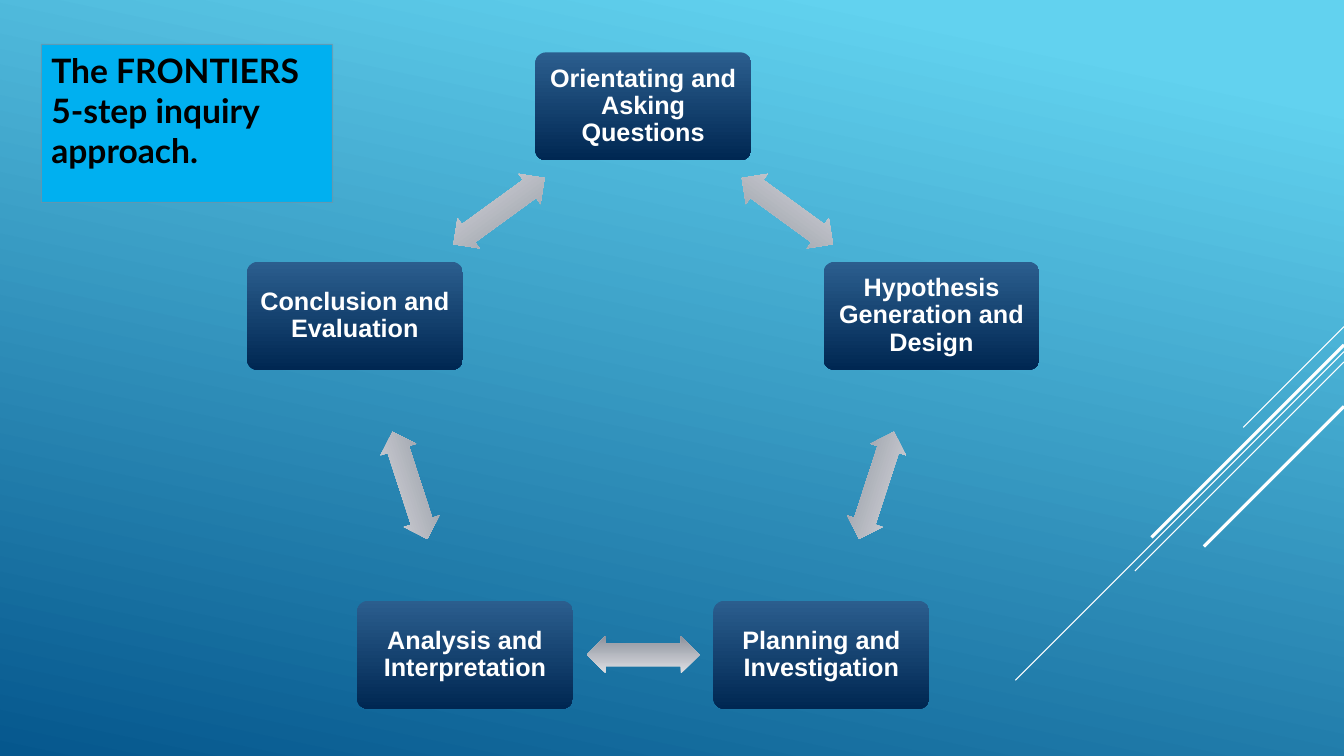
"""Builds the slide of the five-step inquiry cycle."""
import math

from lxml import etree
from pptx import Presentation
from pptx import util as u
from pptx.dml.color import RGBColor
from pptx.enum import shapes, text
from pptx.oxml.ns import qn

WHITE = RGBColor(0xFF, 0xFF, 0xFF)
BLACK = RGBColor(0, 0, 0)
SKY = RGBColor(0x62, 0xD2, 0xEF)
OCEAN = RGBColor(0x05, 0x57, 0x8D)
STEEL = RGBColor(0x2B, 0x5E, 0x8E)
NAVY = RGBColor(0x00, 0x27, 0x52)
SILVER = RGBColor(0xDE, 0xE0, 0xE4)
GREY = RGBColor(0x8D, 0x91, 0x9C)
CYAN = RGBColor(0x00, 0xB0, 0xF0)
EDGE = RGBColor(0x85, 0x8E, 0x99)

WIDTH, HEIGHT = 33.87, 19.05
STEPS = [
    "Orientating and Asking Questions",
    "Hypothesis Generation and Design",
    "Planning and Investigation",
    "Analysis and Interpretation",
    "Conclusion and Evaluation",
]
RAYS = [(8.23, 2.54, 0.75), (8.86, 8.28, 0.75), (9.12, 5.27, 0.75),
        (8.69, 4.85, 2.25), (10.24, 3.53, 2.25)]


class Deck:
    """Holds the style and the current slide."""

    def __init__(self, pres):
        self.font, self.size = "Arial", u.Pt(18)
        self.slide = pres.slides.add_slide(pres.slide_layouts[5])

    def blend(self, fill, first, last, angle=270, start=0):
        fill.gradient()
        fill.gradient_angle = angle
        stops = fill.gradient_stops
        stops[0].color.rgb, stops[1].color.rgb = first, last
        stops[0].position, stops[1].position = start, 1

    def ray(self, top, run, weight):
        line = self.slide.shapes.add_connector(
            shapes.MSO_CONNECTOR.STRAIGHT, u.Cm(WIDTH), u.Cm(top),
            u.Cm(WIDTH - run), u.Cm(top + run))
        line.line.color.rgb = WHITE
        line.line.width = u.Pt(weight)
        etree.SubElement(line._element.spPr, qn("a:effectLst"))

    def shape(self, kind, mid, wide, high, first, last):
        x, y = mid
        item = self.slide.shapes.add_shape(
            kind, u.Cm(x - wide / 2), u.Cm(y - high / 2), u.Cm(wide), u.Cm(high))
        item.shadow.inherit = False
        item.line.fill.background()
        self.blend(item.fill, first, last)
        return item

    def step(self, label, mid):
        box = self.shape(shapes.MSO_SHAPE.ROUNDED_RECTANGLE, mid, 5.44, 2.72, STEEL, NAVY)
        box.adjustments[0] = 0.1
        frame = box.text_frame
        frame.word_wrap = True
        frame.vertical_anchor = text.MSO_ANCHOR.MIDDLE
        frame.margin_left = frame.margin_right = u.Cm(0.18)
        frame.margin_top = frame.margin_bottom = u.Cm(0.18)
        para = frame.paragraphs[0]
        para.text = label
        para.alignment = text.PP_ALIGN.CENTER
        para.line_spacing = 0.9
        font = para.font
        font.name, font.size, font.bold = self.font, self.size, True
        font.color.rgb = WHITE

    def arrow(self, mid, turn):
        item = self.shape(shapes.MSO_SHAPE.LEFT_RIGHT_ARROW, mid, 2.84, 0.94, SILVER, GREY)
        item.adjustments[0], item.adjustments[1] = 0.6, 0.5
        item.rotation = turn

    def title(self, lines):
        box = self.slide.shapes.title
        box.left, box.top = u.Cm(1.04), u.Cm(1.12)
        box.width, box.height = u.Cm(7.34), u.Cm(3.33)
        box.fill.solid()
        box.fill.fore_color.rgb = CYAN
        box.line.color.rgb = EDGE
        box.line.width = u.Pt(0.75)
        tint = box.line._ln.find(".//" + qn("a:srgbClr"))
        etree.SubElement(tint, qn("a:alpha"), val="60000")
        frame = box.text_frame
        frame.text = "\n".join(lines)
        frame.word_wrap = True
        frame.auto_size = text.MSO_AUTO_SIZE.SHAPE_TO_FIT_TEXT
        frame.vertical_anchor = text.MSO_ANCHOR.TOP
        for para in frame.paragraphs:
            para.alignment = text.PP_ALIGN.LEFT
            font = para.font
            font.name, font.size, font.bold = "Lato", u.Pt(24), True
            font.color.rgb = BLACK


def main():
    pres = Presentation()
    pres.slide_width, pres.slide_height = u.Cm(WIDTH), u.Cm(HEIGHT)
    deck = Deck(pres)
    deck.blend(deck.slide.background.fill, SKY, OCEAN, 258, 0.1)
    for ray in RAYS:
        deck.ray(*ray)

    count, hub_x, hub_y, reach = len(STEPS), 16.21, 10.32, 7.64
    sweep = 360 / count

    def spot(angle, far):
        rad = math.radians(angle)
        return hub_x + far * math.sin(rad), hub_y - far * math.cos(rad)

    inner = reach * math.cos(math.radians(sweep / 2))
    for i, label in enumerate(STEPS):
        half = (i + 0.5) * sweep
        deck.step(label, spot(i * sweep, reach))
        deck.arrow(spot(half, inner), half)
    deck.title(["The FRONTIERS", "5-step inquiry approach."])
    pres.save("out.pptx")


if __name__ == "__main__":
    main()
